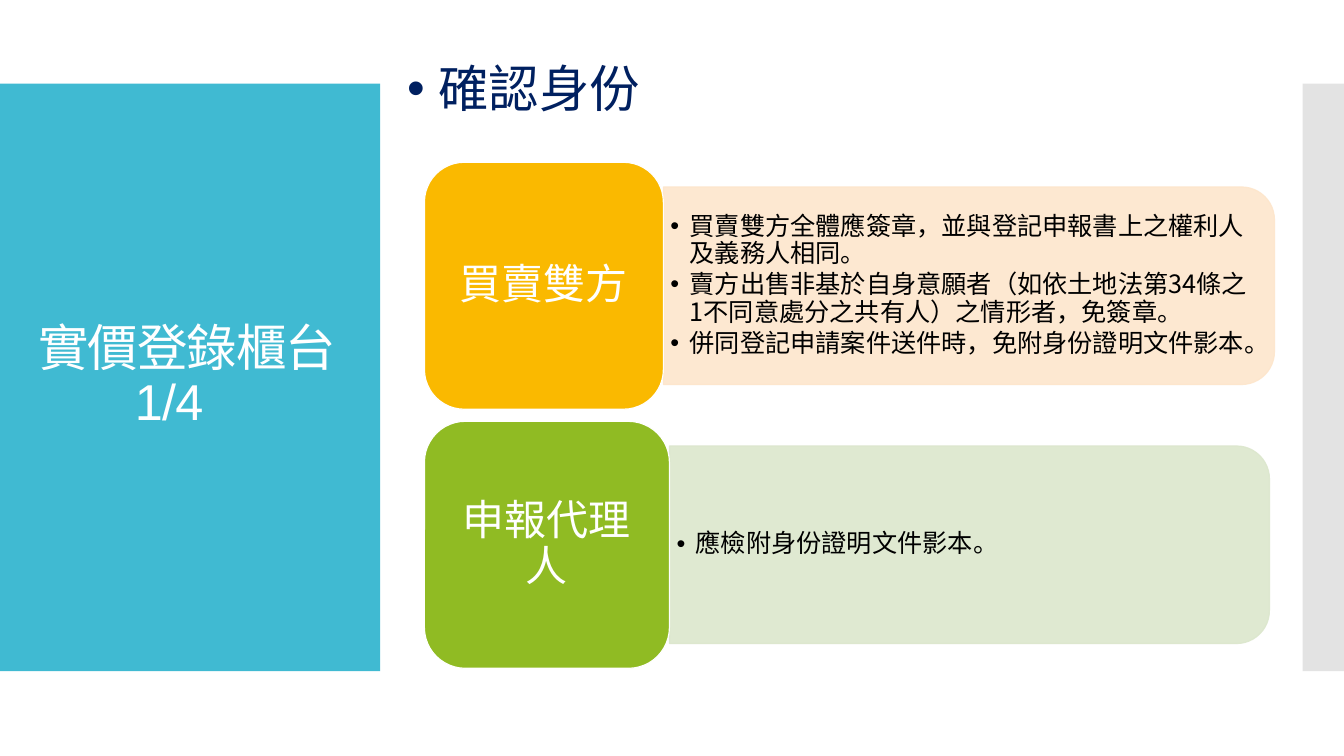
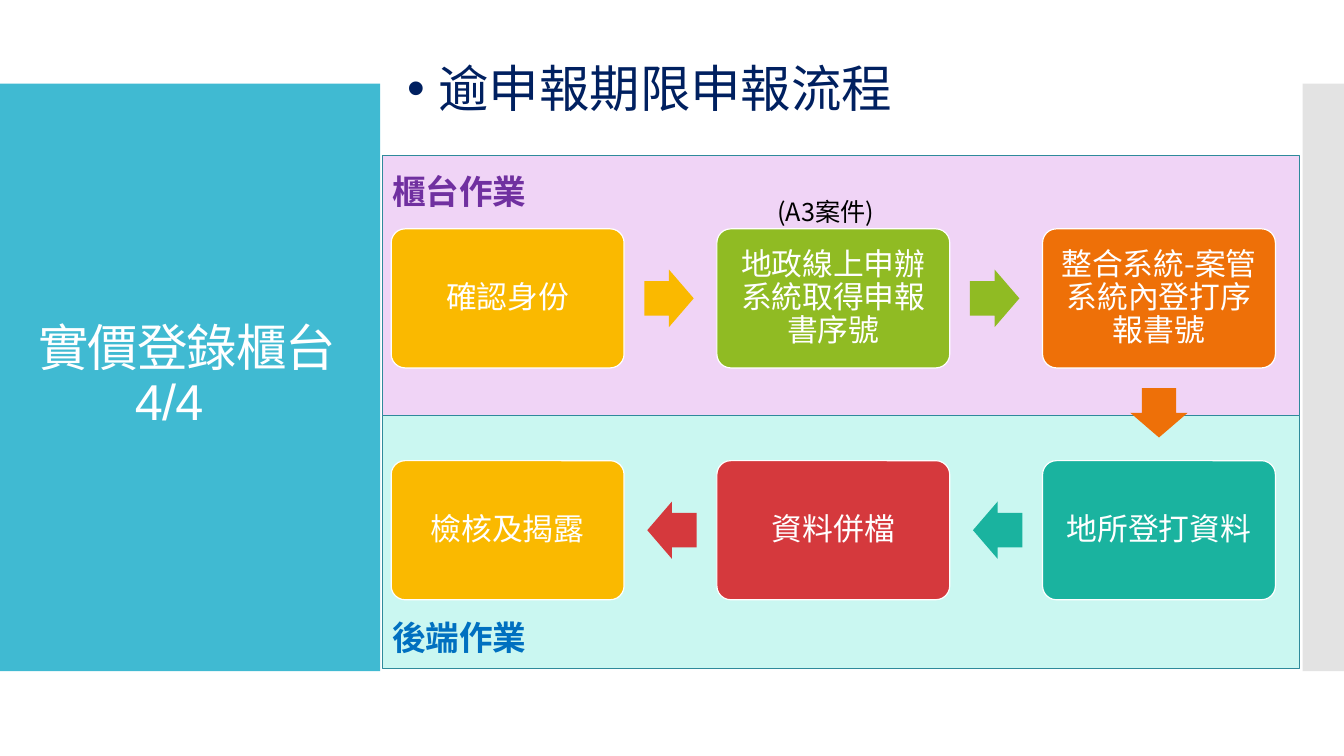
from dataclasses import dataclass
from math import cos, radians, sin
from typing import Optional

from lxml.etree import SubElement
from pptx import Presentation
from pptx.dml.color import RGBColor
from pptx.enum.shapes import MSO_SHAPE
from pptx.enum.text import MSO_ANCHOR, PP_ALIGN
from pptx.oxml.ns import qn
from pptx.util import Inches, Pt

COLORS = {
    "title_band": "40BAD2", "edge_band": "C8C8C8", "headline": "002060",
    "white": "FFFFFF", "black": "000000", "amber": "FAB900",
    "green": "90BB23", "orange": "EE7008", "teal": "1AB39F", "red": "D5393D",
    "pale_amber": "FDE6CC", "pale_green": "DCE7CD",
    "pale_violet": "F0D4F6", "pale_teal": "CAF7F1", "panel_line": "2F8A9B",
    "violet": "7030A0", "blue": "0070C0",
}
BODY_FONT = "Noto Sans CJK SC"
TITLE_FONT = "Arial"
HAIRLINE = 0.85


@dataclass(frozen=True)
class Box:
    left: float
    top: float
    width: float
    height: float

    def lengths(self) -> tuple:
        return tuple(Inches(n) for n in (self.left, self.top, self.width, self.height))


@dataclass(frozen=True)
class TextStyle:
    size: float
    color: str
    font: str = BODY_FONT
    bold: bool = False
    align: PP_ALIGN = PP_ALIGN.LEFT
    anchor: MSO_ANCHOR = MSO_ANCHOR.TOP
    line_spacing: float = 1.0
    space_after: float = 0
    bullet_indent: float = 0
    inset_x: float = 0.1
    inset_y: float = 0.05
    tracking: float = 0


@dataclass(frozen=True)
class Party:
    name: str
    color: str
    pale_color: str
    top: float
    name_width: float
    detail_width: float
    details: tuple


@dataclass(frozen=True)
class Step:
    text: str
    color: str
    column: int
    row: int
    arrow_angle: Optional[int]


@dataclass(frozen=True)
class Label:
    text: str
    box: Box
    style: TextStyle


MIDDLE = MSO_ANCHOR.MIDDLE
TITLE_STYLE = TextStyle(36, "white", TITLE_FONT, anchor=MIDDLE, line_spacing=0.9, tracking=-0.6)
HEADLINE_STYLE = TextStyle(36, "headline", bullet_indent=0.31)
PARTY_STYLE = TextStyle(30, "white", align=PP_ALIGN.CENTER, anchor=MIDDLE,
                        line_spacing=0.9, inset_x=0.12, inset_y=0.06)
DETAIL_STYLE = TextStyle(18, "black", anchor=MIDDLE, line_spacing=0.9, space_after=2.7,
                         bullet_indent=0.19, inset_x=0.07, inset_y=0.04)
STEP_STYLE = TextStyle(22, "white", align=PP_ALIGN.CENTER, anchor=MIDDLE,
                       line_spacing=0.9, inset_x=0.09, inset_y=0.09)

# Geometry of the identity cards
PARTY_LEFT, PARTY_HEIGHT = 4.21, 2.45
DETAIL_HEIGHT, DETAIL_TEXT_HEIGHT = 1.96, 1.77

# Geometry of the process grid
STEP_LEFT, STEP_TOP, STEP_WIDTH, STEP_HEIGHT = 3.88, 2.27, 2.31, 1.38
COLUMN_PITCH, ROW_PITCH = 3.23, 2.3
ARROW_WIDTH, ARROW_HEIGHT, ARROW_GAP = 0.49, 0.57, 0.2

PARTIES = (
    Party("買賣雙方", "amber", "pale_amber", 1.61, 2.37, 6.06, (
        "買賣雙方全體應簽章，並與登記申報書上之權利人及義務人相同。",
        "賣方出售非基於自身意願者（如依土地法第34條之1不同意處分之共有人）之情形者，免簽章。",
        "併同登記申請案件送件時，免附身份證明文件影本。",
    )),
    Party("申報代理人", "green", "pale_green", 4.18, 2.43, 5.95,
          ("應檢附身份證明文件影本。",)),
)
STEPS = (
    Step("確認身份", "amber", 0, 0, 0),
    Step("地政線上申辦系統取得申報書序號", "green", 1, 0, 0),
    Step("整合系統-案管系統內登打序報書號", "orange", 2, 0, 90),
    Step("地所登打資料", "teal", 2, 1, 180),
    Step("資料併檔", "red", 1, 1, 180),
    Step("檢核及揭露", "amber", 0, 1, None),
)
PANELS = (
    ("pale_teal", Box(3.79, 4.12, 9.1, 2.51)),
    ("pale_violet", Box(3.79, 1.54, 9.1, 2.58)),
)
LABELS = (
    Label("櫃台作業", Box(3.79, 1.65, 1.67, 0.5), TextStyle(24, "violet", bold=True)),
    Label("後端作業", Box(3.79, 6.07, 1.67, 0.5), TextStyle(24, "blue", bold=True)),
    Label("(A3案件)", Box(7.61, 1.9, 1.31, 0.4), TextStyle(18, "black")),
)


def rgb(name: str) -> RGBColor:
    return RGBColor.from_string(COLORS[name])


def set_opacity(fill_parent, percent: int) -> None:
    color = fill_parent.find(qn("a:solidFill"))[0]
    SubElement(color, qn("a:alpha")).set("val", str(percent * 1000))


def add_bullet(paragraph, indent: float) -> None:
    properties = paragraph._p.get_or_add_pPr()
    properties.set("marL", str(Inches(indent)))
    properties.set("indent", str(-Inches(indent)))
    SubElement(properties, qn("a:buFont")).set("typeface", "Arial")
    SubElement(properties, qn("a:buChar")).set("char", "•")


def write_text(shape, lines: tuple, style: TextStyle) -> None:
    frame = shape.text_frame
    frame.text = "\n".join(lines)
    frame.word_wrap = True
    frame.vertical_anchor = style.anchor
    frame.margin_left = frame.margin_right = Inches(style.inset_x)
    frame.margin_top = frame.margin_bottom = Inches(style.inset_y)
    for paragraph in frame.paragraphs:
        paragraph.alignment = style.align
        paragraph.line_spacing = style.line_spacing
        paragraph.space_after = Pt(style.space_after)
        if style.bullet_indent:
            add_bullet(paragraph, style.bullet_indent)
        for run in paragraph.runs:
            run.font.size = Pt(style.size)
            run.font.bold = style.bold
            run.font.color.rgb = rgb(style.color)
            run.font.name = style.font
            properties = run._r.get_or_add_rPr()
            SubElement(properties, qn("a:ea")).set("typeface", BODY_FONT)
            if style.tracking:
                properties.set("spc", str(round(style.tracking * 100)))


def add_text(slide, box: Box, lines: tuple, style: TextStyle):
    shape = slide.shapes.add_textbox(*box.lengths())
    write_text(shape, lines, style)
    return shape


def add_block(slide, kind: MSO_SHAPE, box: Box, fill: str,
              line: Optional[str] = None, opacity: int = 100):
    shape = slide.shapes.add_shape(kind, *box.lengths())
    shape.shadow.inherit = False
    shape.fill.solid()
    shape.fill.fore_color.rgb = rgb(fill)
    if line:
        shape.line.color.rgb = rgb(line)
        shape.line.width = Pt(HAIRLINE)
    else:
        shape.line.fill.background()
    if opacity < 100:
        properties = shape._element.spPr
        set_opacity(properties, opacity)
        if line:
            set_opacity(properties.find(qn("a:ln")), opacity)
    return shape


def add_base_slide(presentation, page: str, headline: str):
    """Add a slide with both side bands, the title and the headline."""
    slide = presentation.slides.add_slide(presentation.slide_layouts[6])
    add_block(slide, MSO_SHAPE.RECTANGLE, Box(0, 0.83, 3.77, 5.83), "title_band")
    add_block(slide, MSO_SHAPE.RECTANGLE, Box(12.92, 0.83, 0.41, 5.83), "edge_band", opacity=50)
    title = add_text(slide, Box(0.28, 1.23, 3.22, 5.03), ("實價登錄櫃台", page), TITLE_STYLE)
    page_paragraph = title.text_frame.paragraphs[1]
    page_paragraph._p.get_or_add_pPr().set("marL", str(Inches(0.96)))
    add_text(slide, Box(3.94, 0.52, 8.45, 0.71), (headline,), HEADLINE_STYLE)
    return slide


def add_party(slide, party: Party) -> None:
    detail_left = PARTY_LEFT + party.name_width
    middle = party.top + PARTY_HEIGHT / 2
    # The detail card is an upright shape turned a quarter about its centre
    card = Box(detail_left + (party.detail_width - DETAIL_HEIGHT) / 2,
               middle - party.detail_width / 2, DETAIL_HEIGHT, party.detail_width)
    add_block(slide, MSO_SHAPE.ROUND_2_SAME_RECTANGLE, card, party.pale_color,
              party.pale_color, opacity=90).rotation = 90
    text_box = Box(detail_left, middle - DETAIL_TEXT_HEIGHT / 2,
                   party.detail_width - 0.1, DETAIL_TEXT_HEIGHT)
    add_text(slide, text_box, party.details, DETAIL_STYLE)
    name_box = Box(PARTY_LEFT, party.top, party.name_width, PARTY_HEIGHT)
    name_card = add_block(slide, MSO_SHAPE.ROUNDED_RECTANGLE, name_box, party.color, "white")
    write_text(name_card, (party.name,), PARTY_STYLE)


def add_step(slide, step: Step) -> None:
    box = Box(STEP_LEFT + step.column * COLUMN_PITCH, STEP_TOP + step.row * ROW_PITCH,
              STEP_WIDTH, STEP_HEIGHT)
    card = add_block(slide, MSO_SHAPE.ROUNDED_RECTANGLE, box, step.color, "white")
    card.adjustments[0] = 0.1
    write_text(card, (step.text,), STEP_STYLE)
    if step.arrow_angle is None:
        return
    # The arrow leaves the side of the card that it points away from
    angle = radians(step.arrow_angle)
    reach = ARROW_GAP + ARROW_WIDTH / 2
    center_x = box.left + box.width / 2 + (box.width / 2 + reach) * cos(angle)
    center_y = box.top + box.height / 2 + (box.height / 2 + reach) * sin(angle)
    arrow_box = Box(center_x - ARROW_WIDTH / 2, center_y - ARROW_HEIGHT / 2,
                    ARROW_WIDTH, ARROW_HEIGHT)
    arrow = add_block(slide, MSO_SHAPE.RIGHT_ARROW, arrow_box, step.color)
    arrow.adjustments[0] = 0.6
    arrow.adjustments[1] = 0.5
    arrow.rotation = step.arrow_angle


def add_identity_slide(presentation) -> None:
    slide = add_base_slide(presentation, "1/4", "確認身份")
    for party in PARTIES:
        add_party(slide, party)


def add_process_slide(presentation) -> None:
    slide = add_base_slide(presentation, "4/4", "逾申報期限申報流程")
    for color, box in PANELS:
        add_block(slide, MSO_SHAPE.RECTANGLE, box, color, "panel_line")
    for step in STEPS:
        add_step(slide, step)
    for label in LABELS:
        add_text(slide, label.box, (label.text,), label.style)


def main() -> None:
    presentation = Presentation()
    presentation.slide_width = Inches(13.33)
    presentation.slide_height = Inches(7.5)
    add_identity_slide(presentation)
    add_process_slide(presentation)
    presentation.save("out.pptx")


if __name__ == "__main__":
    main()
